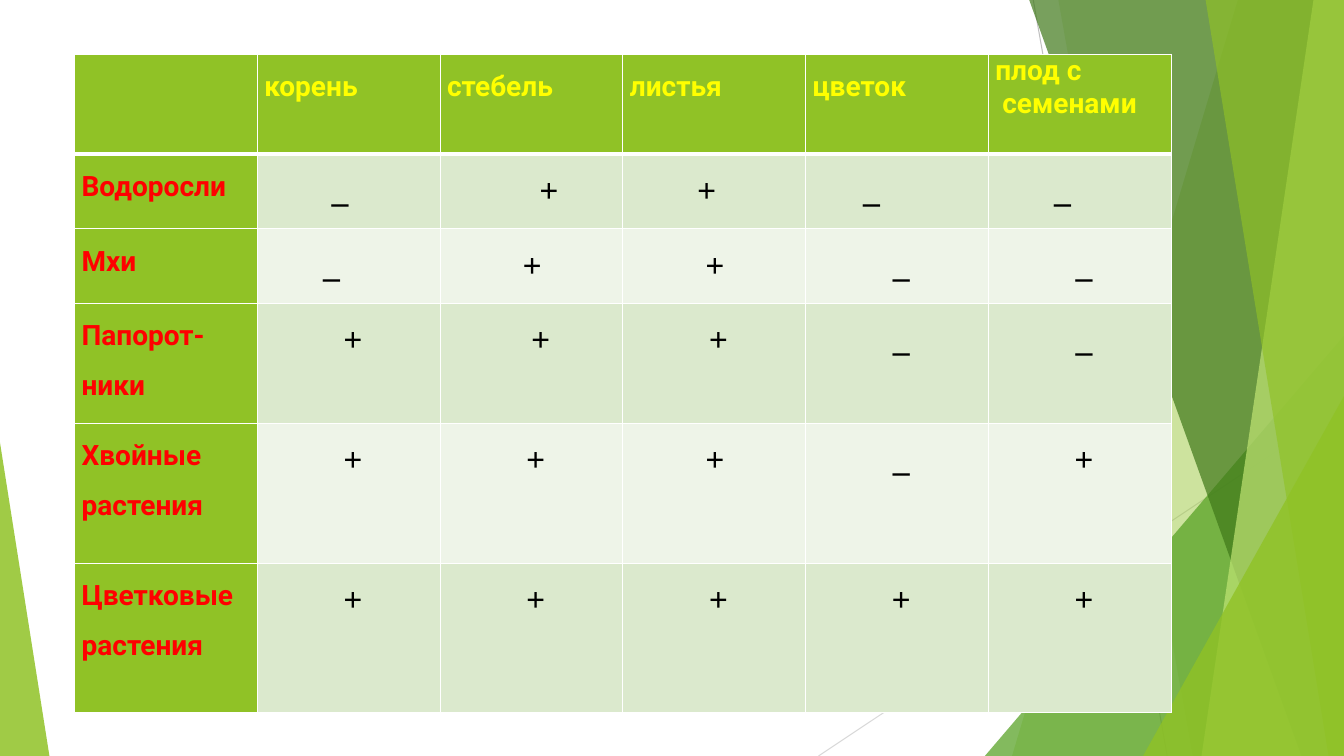
from dataclasses import dataclass

import lxml.etree
import pptx
import pptx.dml.color
import pptx.enum.shapes
import pptx.enum.text
import pptx.oxml
import pptx.oxml.ns
import pptx.util

Pt = pptx.util.Pt
ALIGN = pptx.enum.text.PP_ALIGN
qn = pptx.oxml.ns.qn


@dataclass(frozen=True)
class Theme:
    white: str = "FFFFFF"
    green: str = "90C226"
    leaf: str = "54A021"
    forest: str = "3F7819"
    lime: str = "C0E474"
    gray: str = "BFBFBF"
    light_gray: str = "D9D9D9"
    row_fills: tuple = ("DBE9CD", "EEF4E8")
    head_text: str = "FFFF00"
    name_text: str = "FF0000"
    sign_text: str = "000000"
    label_font: str = "Roboto"
    sign_font: str = "Times New Roman"
    label_size: int = 20
    sign_size: int = 24
    cell_margin: int = 5
    indent_step: int = 6
    spacing: float = 1.5


HEADS = [["корень"], ["стебель"], ["листья"], ["цветок"], ["плод с", " семенами"]]
# Plant, signs, indent steps of each sign (0 = centred)
PLANTS = [
    ("Водоросли", "_++__", (8, 11, 8, 6, 7)),
    ("Мхи", "_++__", (7, 9, 9, 0, 0)),
    ("Папорот-ники", "+++__", (0, 10, 0, 0, 0)),
    ("Хвойные растения", "+++_+", (0, 0, 9, 0, 0)),
    ("Цветковые растения", "+++++", (0, 0, 0, 0, 0)),
]
COLUMN_WIDTH = 13.6
ROW_HEIGHTS = [13.2, 9.87, 9.87, 15.87, 18.53, 19.73]


def rgb(color):
    return pptx.dml.color.RGBColor.from_string(color)


class Page:
    """Draws on one slide; all lengths are percent of its width or height."""

    def __init__(self, deck, theme):
        self.deck, self.theme = deck, theme
        self.shapes = deck.slides.add_slide(deck.slide_layouts[6]).shapes

    def x(self, percent):
        return round(self.deck.slide_width * percent / 100)

    def y(self, percent):
        return round(self.deck.slide_height * percent / 100)

    def line(self, start, end, color):
        line = self.shapes.add_connector(
            pptx.enum.shapes.MSO_CONNECTOR.STRAIGHT,
            self.x(start[0]), self.y(start[1]), self.x(end[0]), self.y(end[1]))
        line.line.color.rgb = rgb(color)
        line.line.width = Pt(0.75)
        lxml.etree.SubElement(line._element.spPr, qn("a:effectLst"))

    def paint(self, shape, color, opacity):
        shape.shadow.inherit = False
        shape.line.fill.background()
        shape.fill.solid()
        shape.fill.fore_color.rgb = rgb(color)
        tint = shape._element.spPr.find(".//" + qn("a:srgbClr"))
        lxml.etree.SubElement(tint, qn("a:alpha"), val=str(opacity * 1000))

    def band(self, top, bottom, color, opacity):
        """Fills from a slanted left edge to the right side of the slide."""
        builder = self.shapes.build_freeform(self.x(top), 0)
        builder.add_line_segments([(self.x(100), 0), (self.x(100), self.y(100)),
                                   (self.x(bottom), self.y(100))])
        self.paint(builder.convert_to_shape(), color, opacity)

    def corner(self, left, top, width, apex, color, opacity):
        """Adds a right triangle that stands on the bottom of the slide."""
        triangle = self.shapes.add_shape(
            pptx.enum.shapes.MSO_SHAPE.ISOSCELES_TRIANGLE,
            self.x(left), self.y(top), self.x(width), self.y(100 - top))
        triangle.adjustments[0] = apex
        self.paint(triangle, color, opacity)

    def table(self, left, top, column_width, row_heights, columns):
        table = self.shapes.add_table(
            len(row_heights), columns, self.x(left), self.y(top),
            self.x(column_width * columns), self.y(sum(row_heights))).table
        for column in table.columns:
            column.width = self.x(column_width)
        for row, height in zip(table.rows, row_heights):
            row.height = self.y(height)
        return table

    def cell(self, cell, fill, bottom=1, top=1):
        properties = cell._tc.get_or_add_tcPr()
        for side, width in (("L", 1), ("R", 1), ("T", top), ("B", bottom)):
            border = lxml.etree.SubElement(properties, qn("a:ln" + side), w=str(Pt(width)))
            solid = lxml.etree.SubElement(border, qn("a:solidFill"))
            lxml.etree.SubElement(solid, qn("a:srgbClr"), val=self.theme.white)
        cell.fill.solid()
        cell.fill.fore_color.rgb = rgb(fill)
        cell.margin_left = cell.margin_right = Pt(self.theme.cell_margin)
        cell.margin_top = cell.margin_bottom = 0

    def text(self, cell, lines, font, size, color, align, spacing):
        for index, line in enumerate(lines):
            para = cell.text_frame.add_paragraph() if index else cell.text_frame.paragraphs[0]
            para.alignment, para.line_spacing = align, spacing
            span = para.add_run()
            span.text = line
            span.font.name, span.font.size, span.font.bold = font, Pt(size), True
            span.font.color.rgb = rgb(color)

    def label(self, cell, lines, color):
        single = len(lines) == 1
        self.text(cell, lines, self.theme.label_font, self.theme.label_size, color,
                  ALIGN.JUSTIFY if single else ALIGN.LEFT,
                  self.theme.spacing if single else 1.0)

    def sign(self, cell, mark, steps):
        self.text(cell, [mark], self.theme.sign_font, self.theme.sign_size,
                  self.theme.sign_text, ALIGN.JUSTIFY if steps else ALIGN.CENTER,
                  self.theme.spacing)
        cell.margin_left = Pt(self.theme.cell_margin + self.theme.indent_step * (steps or 1))


def draw_backdrop(page):
    theme = page.theme
    page.line((76.88, 0), (86.85, 100), theme.gray)
    page.line((100, 53.73), (60.9, 100), theme.light_gray)
    page.band(92.1, 75.3, theme.green, 30)
    page.band(78.75, 88.73, theme.green, 20)
    page.corner(73.28, 44.4, 26.72, 1, theme.leaf, 72)
    page.band(76.58, 96.83, theme.forest, 70)
    page.band(97.73, 89.4, theme.lime, 70)
    page.band(89.7, 98.85, theme.green, 65)
    page.corner(85.05, 52.4, 14.95, 1, theme.green, 80)
    page.corner(0, 58.53, 3.68, 0, theme.green, 85)


def draw_plant_table(page):
    theme = page.theme
    table = page.table(5.55, 7.2, COLUMN_WIDTH, ROW_HEIGHTS, len(HEADS) + 1)
    page.cell(table.cell(0, 0), theme.green, bottom=3)
    for column, lines in enumerate(HEADS, 1):
        head = table.cell(0, column)
        page.cell(head, theme.green, bottom=3)
        page.label(head, lines, theme.head_text)
    for row, (plant, signs, indents) in enumerate(PLANTS, 1):
        top = 3 if row == 1 else 1
        name = table.cell(row, 0)
        page.cell(name, theme.green, top=top)
        page.label(name, [plant], theme.name_text)
        for column, (mark, steps) in enumerate(zip(signs, indents), 1):
            box = table.cell(row, column)
            page.cell(box, theme.row_fills[(row - 1) % 2], top=top)
            page.sign(box, mark, steps)


def main():
    deck = pptx.Presentation()
    deck.slide_width = pptx.util.Inches(13.33)
    deck.slide_height = pptx.util.Inches(7.5)
    page = Page(deck, Theme())
    draw_backdrop(page)
    draw_plant_table(page)
    deck.save("out.pptx")


if __name__ == "__main__":
    main()
